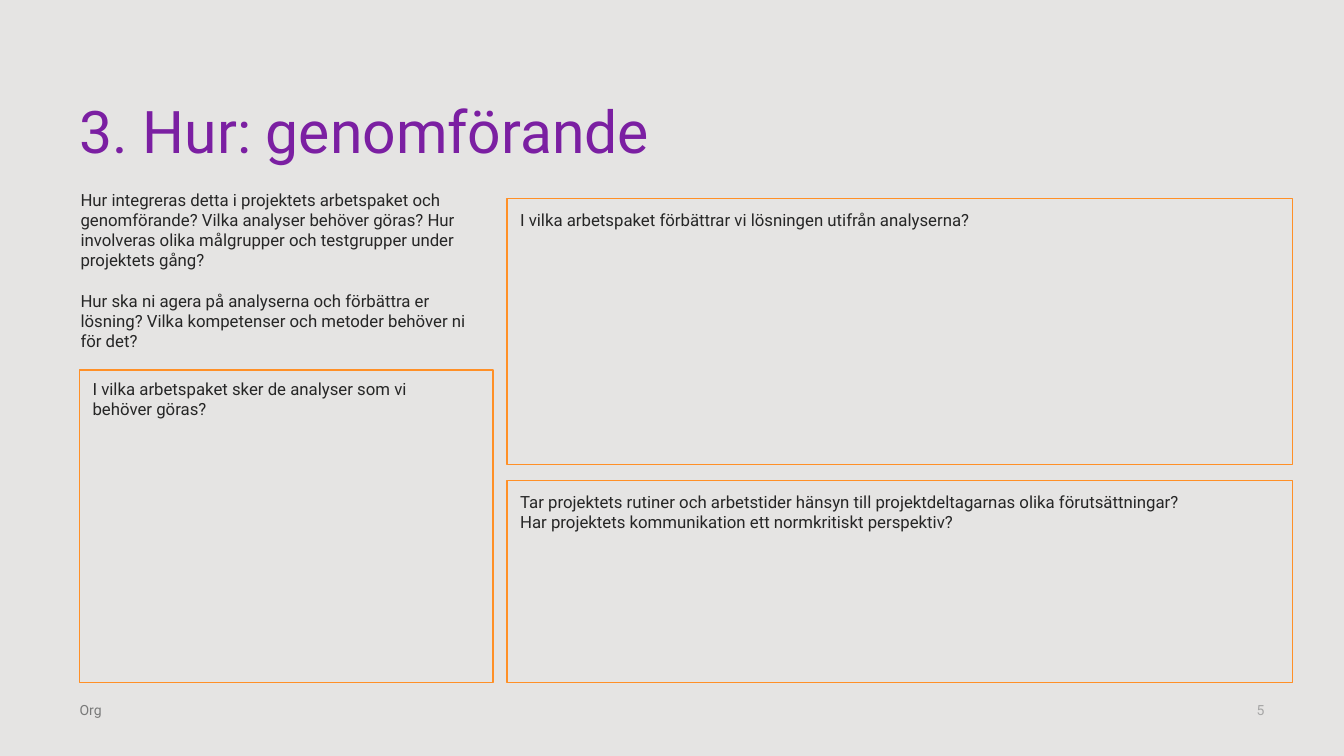
from pptx import Presentation
from pptx.dml.color import RGBColor
from pptx.enum.shapes import MSO_SHAPE
from pptx.enum.text import MSO_ANCHOR, PP_ALIGN
from pptx.util import Pt

RECT = MSO_SHAPE.RECTANGLE
TOP = MSO_ANCHOR.TOP
LEFT, RIGHT = PP_ALIGN.LEFT, PP_ALIGN.RIGHT
SCALE = 9144  # EMU per px, 100 px to the inch


def px(n):
    return n * SCALE


def color(code):
    return RGBColor.from_string(code)


def write(frame, text, size=12, ink="262626", font="Roboto", align=LEFT,
          pad=(10, 5), gap=0, lead=None):
    """Fill a frame, one paragraph per line of text."""
    frame.word_wrap = True
    frame.vertical_anchor = TOP
    frame.margin_left = frame.margin_right = px(pad[0])
    frame.margin_top = frame.margin_bottom = px(pad[1])
    for i, line in enumerate(text.split("\n")):
        para = frame.paragraphs[0] if i == 0 else frame.add_paragraph()
        para.alignment = align
        para.space_before = Pt(gap if i else 0)
        if lead:
            para.line_spacing = lead
        run = para.add_run()
        run.text = line
        run.font.size = Pt(size)
        run.font.name = font
        run.font.color.rgb = color(ink)


class Page:
    back, title_ink, edge = "E5E4E3", "7B1FA2", "FF9027"

    def __init__(self, deck):
        self.slide = deck.slides.add_slide(deck.slide_layouts[5])
        fill = self.slide.background.fill
        fill.solid()
        fill.fore_color.rgb = color(self.back)

    def title(self, text, x, y, w, h):
        head = self.slide.shapes.title
        head.left, head.top, head.width, head.height = map(px, (x, y, w, h))
        write(head.text_frame, text, size=42, ink=self.title_ink,
              pad=(0, 0), lead=0.9)

    def text(self, text, x, y, w, h, **style):
        box = self.slide.shapes.add_textbox(*map(px, (x, y, w, h)))
        write(box.text_frame, text, **style)

    def panel(self, x, y, w, h):
        box = self.slide.shapes.add_shape(RECT, *map(px, (x, y, w, h)))
        box.shadow.inherit = False
        box.fill.background()
        box.line.color.rgb = color(self.edge)
        box.line.width = Pt(1)


def main():
    deck = Presentation()
    deck.slide_width, deck.slide_height = px(1333), px(750)
    page = Page(deck)

    # Title and introduction
    page.title("3. Hur: genomförande", 79, 102, 1176, 77)
    page.text(
        "Hur integreras detta i projektets arbetspaket och genomförande? "
        "Vilka analyser behöver göras? Hur involveras olika målgrupper och "
        "testgrupper under projektets gång?\n"
        "Hur ska ni agera på analyserna och förbättra er lösning? "
        "Vilka kompetenser och metoder behöver ni för det?",
        70, 183, 419, 192, gap=14.4)

    # Framed questions: panel box, text box, question
    cards = [
        ((79, 367, 410, 310), (82, 371, 334, 50),
         "I vilka arbetspaket sker de analyser som vi behöver göras?"),
        ((503, 197, 779, 264), (506, 203, 566, 50),
         "I vilka arbetspaket förbättrar vi lösningen utifrån analyserna?"),
        ((503, 477, 779, 200), (506, 483, 688, 50),
         "Tar projektets rutiner och arbetstider hänsyn till "
         "projektdeltagarnas olika förutsättningar? "
         "Har projektets kommunikation ett normkritiskt perspektiv?"),
    ]
    for frame, place, ask in cards:
        page.panel(*frame)
        page.text(ask, *place)

    # Footer
    page.text("Org", 79, 696, 130, 17, size=10, ink="797979", pad=(0, 0))
    page.text("5", 1212, 696, 42, 14, size=10, ink="A6A6A6", pad=(0, 0),
              align=RIGHT)

    deck.save("out.pptx")


if __name__ == "__main__":
    main()
